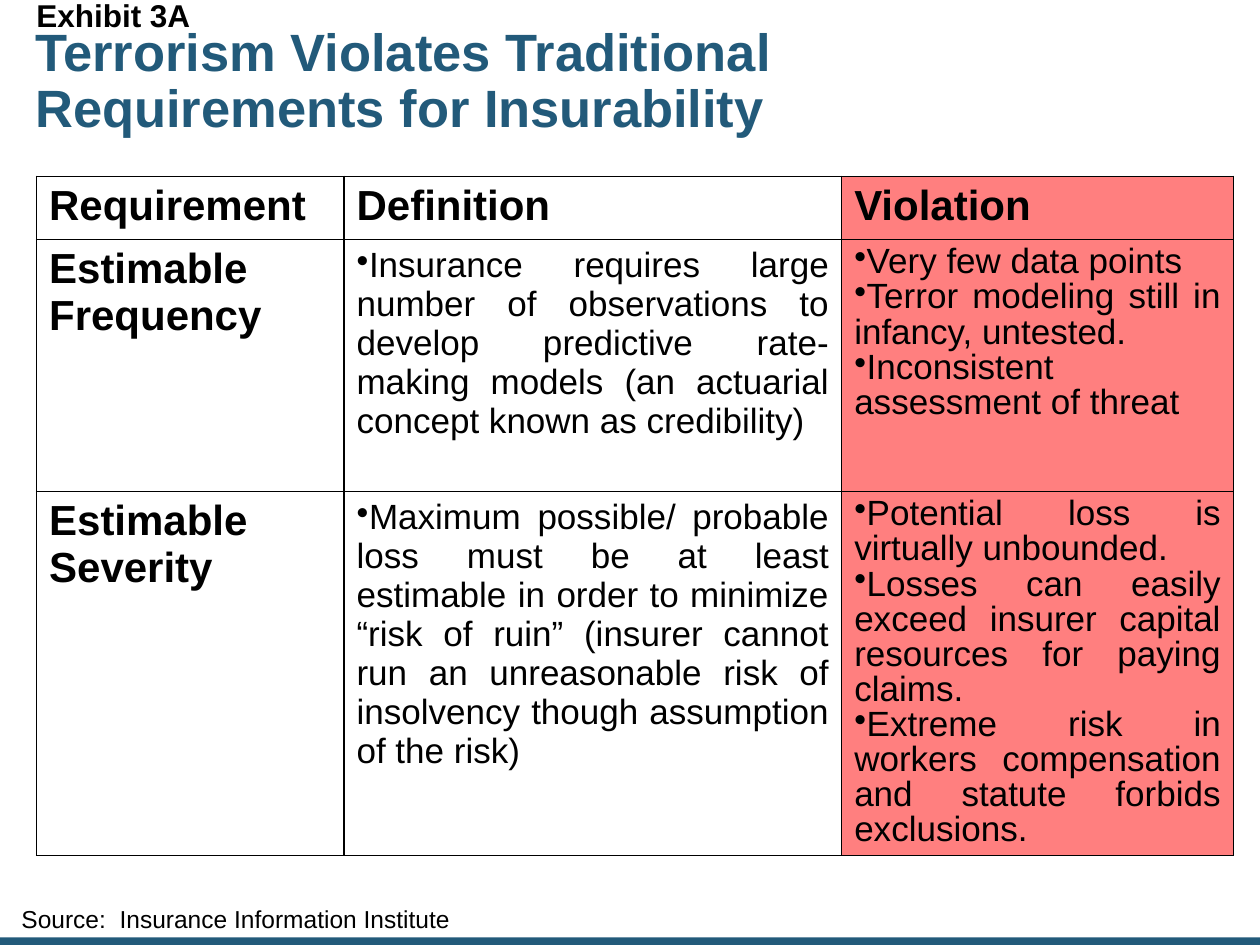
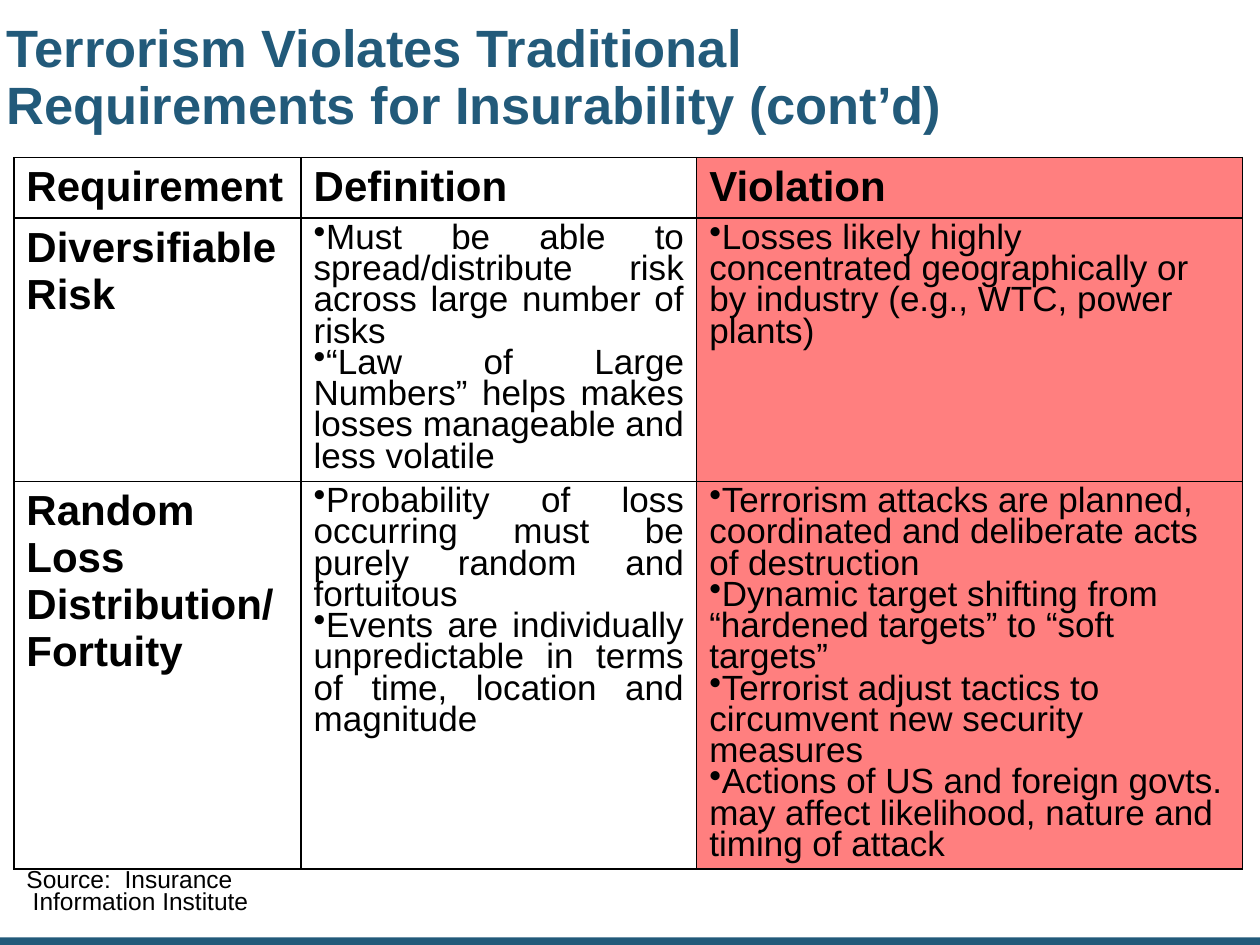
from lxml.etree import SubElement
from pptx import Presentation
from pptx.dml.color import RGBColor
from pptx.enum.shapes import MSO_SHAPE as Shape
from pptx.enum.text import MSO_ANCHOR as Anchor, MSO_AUTO_SIZE as AutoSize, PP_ALIGN as Align
from pptx.oxml import parse_xml
from pptx.oxml.ns import nsdecls, qn
from pptx.util import Inches, Pt

FONT = "Arial"
TEAL, BLACK, RED = "225A7A", "000000", "FF0000"
HEADINGS = ["Requirement", "Definition", "Violation"]
VIOLATION = HEADINGS.index("Violation")

FREQUENCY_AND_SEVERITY = [
    (["Estimable", "Frequency"],
     ["Insurance requires large number of observations to develop predictive "
      "rate-making models (an actuarial concept known as credibility)"],
     ["Very few data points",
      "Terror modeling still in infancy, untested.",
      "Inconsistent assessment of threat"]),
    (["Estimable", "Severity"],
     ["Maximum possible/ probable loss must be at least estimable in order to "
      "minimize “risk of ruin” (insurer cannot run an unreasonable risk of "
      "insolvency though assumption of the risk)"],
     ["Potential loss is virtually unbounded.",
      "Losses can easily exceed insurer capital resources for paying claims.",
      "Extreme risk in workers compensation and statute forbids exclusions."]),
]
DIVERSITY_AND_RANDOMNESS = [
    (["Diversifiable Risk"],
     ["Must be able to spread/distribute risk across large number of risks",
      "“Law of Large Numbers” helps makes losses manageable and less volatile"],
     ["Losses likely highly concentrated geographically or by industry "
      "(e.g., WTC, power plants)"]),
    (["Random Loss Distribution/Fortuity"],
     ["Probability of loss occurring must be purely random and fortuitous",
      "Events are individually unpredictable in terms of time, location and magnitude"],
     ["Terrorism attacks are planned, coordinated and deliberate acts of destruction",
      "Dynamic target shifting from “hardened targets” to “soft targets”",
      "Terrorist adjust tactics to circumvent new security measures",
      "Actions of US and foreign govts. may affect likelihood, nature and timing of attack"]),
]


def color(value):
    return RGBColor.from_string(value)


def style(para, size, bold=False, value=BLACK, align=Align.LEFT, spacing=1.0):
    para.alignment = align
    para.line_spacing = spacing
    font = para.font
    font.name, font.size, font.bold = FONT, Pt(size), bold
    font.color.rgb = color(value)


def add_paragraphs(frame, lines):
    """Write one paragraph per line and return them all."""
    frame.text = "\n".join(lines)
    return frame.paragraphs


def set_margins(frame, margin):
    frame.margin_left = frame.margin_right = Inches(margin)
    frame.margin_top = frame.margin_bottom = Inches(margin)


def add_bullet(para):
    """Give the paragraph a bullet that the text follows without a gap."""
    props = para._p.get_or_add_pPr()
    props.set("marL", "0")
    props.set("indent", "0")
    SubElement(props, qn("a:buChar"), char="•")
    tabs = SubElement(props, qn("a:tabLst"))
    SubElement(tabs, qn("a:tab"), pos=str(Inches(0.25)), algn="l")


def draw_borders(cell):
    props = cell._tc.get_or_add_tcPr()
    for index, side in enumerate("LRTB"):
        props.insert(index, parse_xml(
            f'<a:ln{side} {nsdecls("a")} w="{Pt(1)}"><a:solidFill>'
            f'<a:srgbClr val="{BLACK}"/></a:solidFill></a:ln{side}>'))


def fill_cell(cell, highlighted):
    if not highlighted:
        cell.fill.background()
        return
    cell.fill.solid()
    cell.fill.fore_color.rgb = color(RED)
    shade = cell._tc.tcPr.find(qn("a:solidFill"))[0]
    SubElement(shade, qn("a:alpha"), val="50000")


def add_requirements(page, left, top, widths, heights, content, bullet_styles):
    """bullet_styles holds (alignment, line spacing) for each bulleted column."""
    rows = [[[heading] for heading in HEADINGS], *content]
    table = page.shapes.add_table(
        len(rows), len(widths), Inches(left), Inches(top),
        Inches(sum(widths)), Inches(sum(heights))).table
    table.first_row = table.horz_banding = False
    for column, width in zip(table.columns, widths):
        column.width = Inches(width)
    for r, (row, height) in enumerate(zip(rows, heights)):
        table.rows[r].height = Inches(height)
        for c, lines in enumerate(row):
            cell = table.cell(r, c)
            draw_borders(cell)
            fill_cell(cell, c == VIOLATION)
            for para in add_paragraphs(cell.text_frame, lines):
                if r and c:
                    align, spacing = bullet_styles[c - 1]
                    add_bullet(para)
                    style(para, 20, align=align, spacing=spacing)
                else:
                    style(para, 24, bold=True, align=Align.JUSTIFY)


def add_title(page, left, top, text):
    title = page.shapes.title
    title.left, title.top = Inches(left), Inches(top)
    title.width, title.height = Inches(8.33), Inches(1.25)
    frame = title.text_frame
    frame.auto_size, frame.vertical_anchor = AutoSize.NONE, Anchor.MIDDLE
    set_margins(frame, 0.05)
    for para in add_paragraphs(frame, [text]):
        style(para, 30, bold=True, value=TEAL, spacing=0.9)


def add_source(page, left, top, lines):
    box = page.shapes.add_textbox(Inches(left), Inches(top), Inches(7.28), Inches(0.35))
    set_margins(box.text_frame, 0)
    for index, para in enumerate(add_paragraphs(box.text_frame, lines)):
        para._p.get_or_add_pPr().set("marL", str(Inches(0.05 * index)))
        style(para, 14, spacing=0.75)


def add_exhibit_label(page, text):
    box = page.shapes.add_textbox(Inches(0.19), Inches(-0.08), Inches(1.72), Inches(0.4))
    for para in add_paragraphs(box.text_frame, [text]):
        style(para, 18, bold=True)


def add_master_band(deck, page):
    """Draw the bottom band and move it to the master, which all slides share."""
    band = page.shapes.add_shape(
        Shape.RECTANGLE, 0, Inches(7.44), deck.slide_width, Inches(0.06))
    band.shadow.inherit = False
    band.fill.solid()
    band.fill.fore_color.rgb = color(TEAL)
    band.line.fill.background()
    deck.slide_master.shapes._spTree.insert(2, band._element)


def main():
    deck = Presentation()
    deck.slide_width, deck.slide_height = Inches(10), Inches(7.5)
    title_only = deck.slide_layouts[5]

    page = deck.slides.add_slide(title_only)
    add_master_band(deck, page)
    add_title(page, 0.23, 0.03,
              "Terrorism Violates Traditional Requirements for Insurability")
    add_requirements(page, 0.29, 1.4, [2.44, 3.95, 3.11], [0.5, 2, 2.89],
                     FREQUENCY_AND_SEVERITY,
                     [(Align.JUSTIFY, 1.0), (Align.JUSTIFY, 0.9)])
    add_source(page, 0.17, 7.23, ["Source:  Insurance Information Institute"])
    add_exhibit_label(page, "Exhibit 3A")

    page = deck.slides.add_slide(title_only)
    add_title(page, 0, 0,
              "Terrorism Violates Traditional Requirements for Insurability (cont’d)")
    add_requirements(page, 0.11, 1.25, [2.28, 3.14, 4.33], [0.48, 2.09, 3.07],
                     DIVERSITY_AND_RANDOMNESS,
                     [(Align.JUSTIFY, 0.8), (Align.LEFT, 0.8)])
    add_source(page, 0.21, 6.91, ["Source:  Insurance", "Information Institute"])

    deck.save("out.pptx")


if __name__ == "__main__":
    main()
